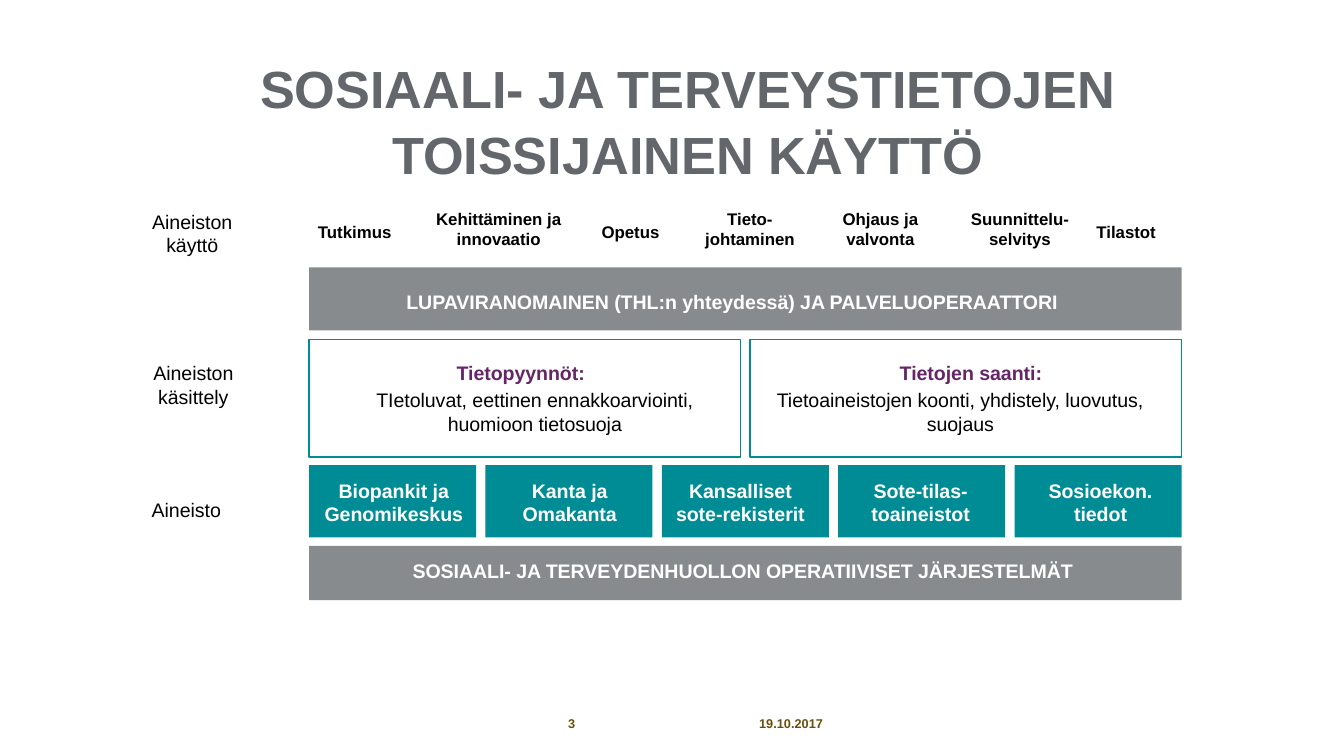
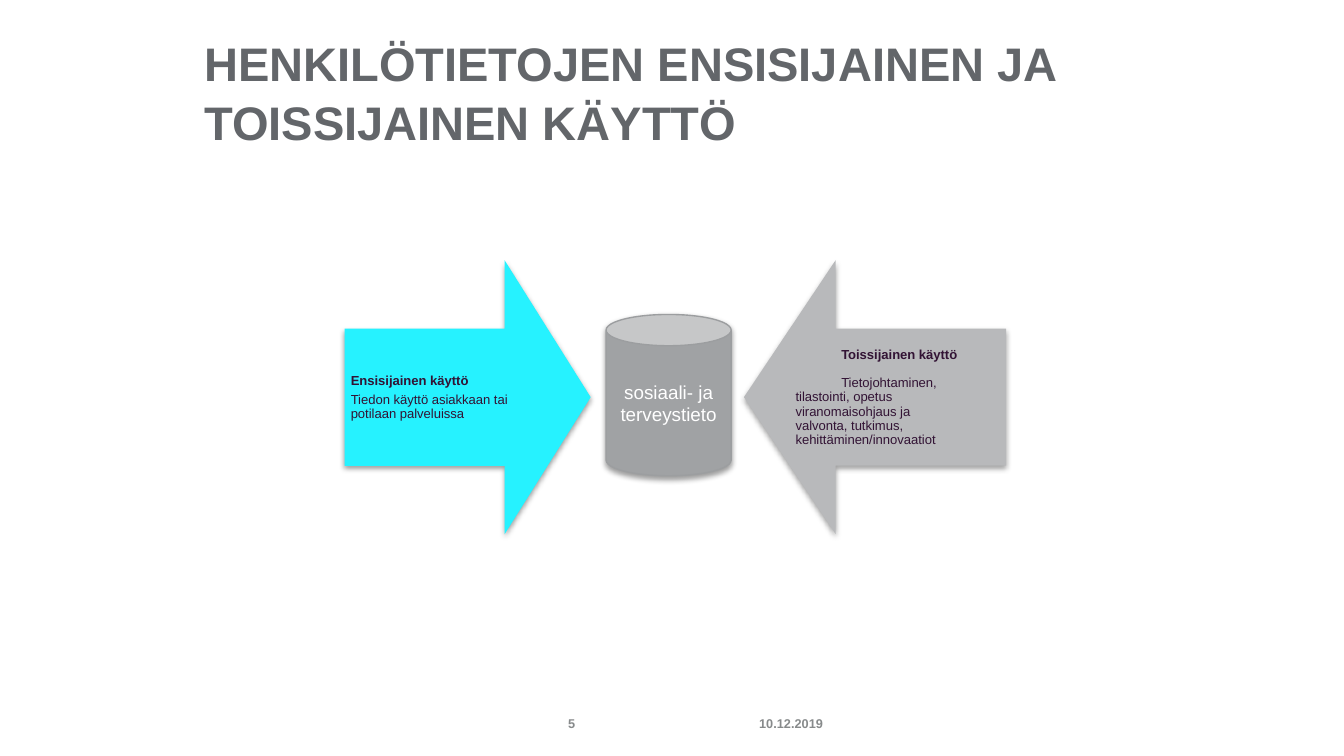
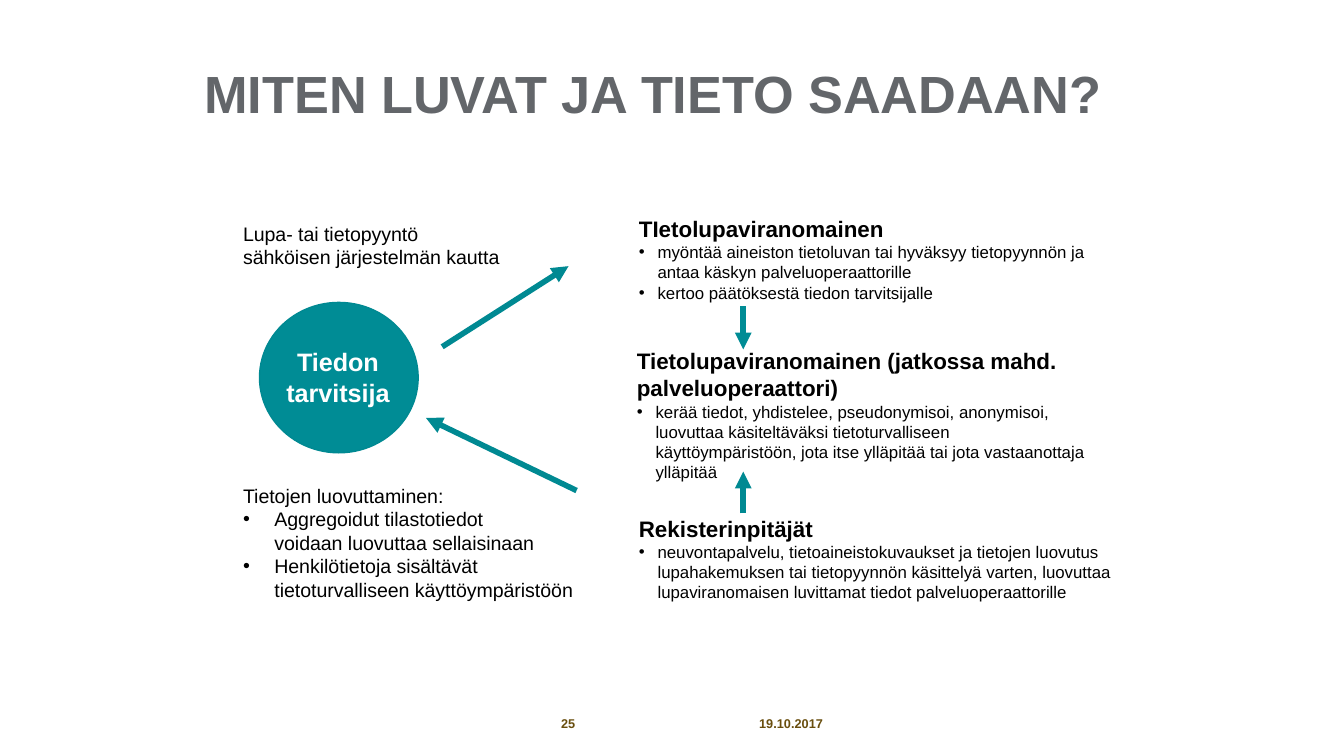
import copy

import pptx
import pptx.dml.color
import pptx.enum.shapes
import pptx.enum.text
import pptx.oxml
import pptx.oxml.ns
import pptx.util
from lxml import etree

Pt = pptx.util.Pt
qn = pptx.oxml.ns.qn
RGB = pptx.dml.color.RGBColor.from_string
ALIGN = pptx.enum.text.PP_ALIGN
ANCHOR = pptx.enum.text.MSO_ANCHOR
SHAPE = pptx.enum.shapes.MSO_SHAPE

COLORS = {
    "title": "63666A", "text": "000000", "white": "FFFFFF",
    "teal": "008C95", "teal_dark": "008992", "gray": "888B8D",
    "heading": "642667", "plum": "321334",
    "cyan": "26F2FF", "silver": "B8B9BB", "can": "A0A2A4", "can_edge": "9C9EA0",
    "brown": "694E0E", "footer_gray": "878A8B",
}
BOLD = {"size": Pt(10.5), "bold": True}
SMALL_BOLD = {"size": Pt(9), "bold": True}
PLAIN = {"size": Pt(10.5), "bold": False}
BULLET = {"size": Pt(9), "bold": False, "indent": 10}
FOOTER = {"size": Pt(6.8), "bold": True}


def write(box, paras, look, color="text", align=ALIGN.LEFT, anchor=ANCHOR.TOP,
          inset=(7.2, 3.6), layout=None):
    """Fill a box with paragraphs: plain strings, or (string, own look) pairs.

    The look key "indent" makes a bulleted paragraph with that hanging indent,
    "first" an indent of the first line only.
    """
    frame = box.text_frame
    side, edge = map(Pt, inset)
    settings = {"word_wrap": True, "vertical_anchor": anchor, "margin_left": side,
                "margin_right": side, "margin_top": edge, "margin_bottom": edge}
    for name, value in settings.items():
        setattr(frame, name, value)
    for index, item in enumerate(paras):
        text, own = item if isinstance(item, tuple) else (item, {})
        values = {**look, **own}
        indent, first = values.pop("indent", 0), values.pop("first", 0)
        shade = COLORS[values.pop("color", color)]
        after = values.pop("after", None)
        para = frame.add_paragraph() if index else frame.paragraphs[0]
        para.text = text
        for name, value in {"alignment": align, "space_after": after, **(layout or {})}.items():
            setattr(para, name, value)
        properties = para._p.get_or_add_pPr()
        if indent:
            properties.set("marL", str(Pt(indent)))
            properties.set("indent", str(Pt(-indent)))
            etree.SubElement(properties, qn("a:buFont")).set("typeface", "Arial")
            etree.SubElement(properties, qn("a:buChar")).set("char", "•")
        elif first:
            properties.set("indent", str(Pt(first)))
        for span in para.runs:
            for name, value in {"name": "Arial", **values}.items():
                setattr(span.font, name, value)
            span.font.color.rgb = RGB(shade)
        for line_break in para._p.findall(qn("a:br")):
            line_break.insert(0, copy.deepcopy(para.runs[0]._r.rPr))


def draw(page, kind, place, fill=None, line=None, shadow=False):
    shape = page.shapes.add_shape(kind, *map(Pt, place))
    shape.shadow.inherit = False
    if fill:
        shape.fill.solid()
        shape.fill.fore_color.rgb = RGB(COLORS[fill])
    else:
        shape.fill.background()
    if line:
        shape.line.color.rgb = RGB(COLORS[line])
        shape.line.width = Pt(0.75)
    else:
        shape.line.fill.background()
    if shadow:
        effects = shape._element.spPr.find(qn("a:effectLst"))
        outer = etree.SubElement(effects, qn("a:outerShdw"), blurRad=str(Pt(3.1)),
                                 dist=str(Pt(1.6)), dir="5400000", rotWithShape="0")
        tint = etree.SubElement(outer, qn("a:srgbClr"), val="000000")
        etree.SubElement(tint, qn("a:alpha"), val="38000")
    return shape


deck = pptx.Presentation()
deck.slide_width, deck.slide_height = Pt(720), Pt(405)

# Title and footer of every slide
WIDE_TITLE = (109.5, 15, 599, 67.7)
pages = []
for title, place, size, align, number, date, shade in [
    ("SOSIAALI- JA TERVEYSTIETOJEN TOISSIJAINEN KÄYTTÖ", (125.3, 27.4, 486, 72.7),
     28, ALIGN.CENTER, "3", "19.10.2017", "brown"),
    ("HENKILÖTIETOJEN ENSISIJAINEN JA TOISSIJAINEN KÄYTTÖ", WIDE_TITLE,
     25.2, ALIGN.LEFT, "5", "10.12.2019", "footer_gray"),
    ("MITEN LUVAT JA TIETO SAADAAN?", WIDE_TITLE,
     28, ALIGN.LEFT, "25", "19.10.2017", "brown"),
]:
    page = deck.slides.add_slide(deck.slide_layouts[6])
    pages.append(page)
    write(page.shapes.add_textbox(*map(Pt, place)), [title], {"size": Pt(size), "bold": True},
          "title", align, ANCHOR.MIDDLE, (0, 3.6), {"line_spacing": 1.05})
    for text, left, width, side in [(date, 399.6, 73.4, ALIGN.LEFT),
                                    (number, 267.8, 47.5, ALIGN.RIGHT)]:
        write(page.shapes.add_textbox(Pt(left), Pt(376.6), Pt(width), Pt(21.6)), [text],
              FOOTER, shade, side, ANCHOR.MIDDLE)

usage_page, arrows_page, permits_page = pages

# Slide 1: layers of secondary use
LEFT, WIDTH, GAP = 165.6, 467.4, 5
for top, height, count, fill, line in [
    (143.3, 33.8, 1, "gray", None),
    (182, 62.8, 2, None, "teal"),
    (249.2, 38.7, 5, "teal", None),
    (292.5, 29, 1, "gray", None),
]:
    width = (WIDTH - GAP * (count - 1)) / count
    for column in range(count):
        draw(usage_page, SHAPE.RECTANGLE,
             (LEFT + column * (width + GAP), top, width, height), fill, line)

TWO_LINES, ONE_LINE = 108, 115.2
SOURCES = 252.8
for paras, left, top, width, look, color, align in [
    (["Aineiston käyttö"], 74.2, 108.7, 57.6, PLAIN, "text", ALIGN.CENTER),
    (["Aineiston käsittely"], 69.8, 190, 67.7, PLAIN, "text", ALIGN.CENTER),
    (["Aineisto"], 74.2, 263, 67.7, PLAIN, "text", ALIGN.LEFT),
    (["Tutkimus"], 141.8, ONE_LINE, 96.5, SMALL_BOLD, "text", ALIGN.CENTER),
    (["Kehittäminen ja innovaatio"], 218.9, TWO_LINES, 96.5, SMALL_BOLD, "text", ALIGN.CENTER),
    (["Opetus"], 315.2, ONE_LINE, 62.6, SMALL_BOLD, "text", ALIGN.LEFT),
    (["Tieto-", "johtaminen"], 353.5, TWO_LINES, 96.5, SMALL_BOLD, "text", ALIGN.CENTER),
    (["Ohjaus ja valvonta"], 430.6, TWO_LINES, 82, SMALL_BOLD, "text", ALIGN.CENTER),
    (["Suunnittelu-", "selvitys"], 498.2, TWO_LINES, 96.5, SMALL_BOLD, "text", ALIGN.CENTER),
    (["Tilastot"], 580.3, ONE_LINE, 96.5, SMALL_BOLD, "text", ALIGN.LEFT),
    (["LUPAVIRANOMAINEN (THL:n yhteydessä) JA PALVELUOPERAATTORI"],
     175.7, 152, 433.4, BOLD, "white", ALIGN.CENTER),
    (["Tietopyynnöt:"], 212.4, 190, 133.2, BOLD, "heading", ALIGN.CENTER),
    (["TIetoluvat, eettinen ennakkoarviointi, huomioon tietosuoja"],
     175.7, 204.5, 221.8, PLAIN, "text", ALIGN.CENTER),
    (["Tietojen saanti:"], 465.1, 190, 110.2, BOLD, "heading", ALIGN.CENTER),
    (["Tietoaineistojen koonti, yhdistely, luovutus, suojaus"],
     401.8, 204.5, 225.4, PLAIN, "text", ALIGN.CENTER),
    (["Biopankit ja Genomikeskus"], 161.3, SOURCES, 99.4, BOLD, "white", ALIGN.CENTER),
    (["Kanta ja", "Omakanta"], 257, SOURCES, 96.5, BOLD, "white", ALIGN.CENTER),
    (["Kansalliset sote-rekisterit"], 348.5, SOURCES, 96.5, BOLD, "white", ALIGN.CENTER),
    (["Sote-tilas-", "toaineistot"], 445, SOURCES, 96.5, BOLD, "white", ALIGN.CENTER),
    (["Sosioekon. tiedot"], 541.4, SOURCES, 96.5, BOLD, "white", ALIGN.CENTER),
    (["SOSIAALI- JA TERVEYDENHUOLLON OPERATIIVISET JÄRJESTELMÄT"],
     183.6, 296, 429.1, BOLD, "white", ALIGN.CENTER),
]:
    height = 32.4 if top in (TWO_LINES, SOURCES, 204.5) else 22
    write(usage_page.shapes.add_textbox(*map(Pt, (left, top, width, height))),
          paras, look, color, align)

# Slide 2: two uses pointing at the shared data
PRIMARY = [
    ("Ensisijainen käyttö", {"bold": True, "after": Pt(2.5)}),
    ("Tiedon käyttö asiakkaan tai potilaan palveluissa", {"after": Pt(2.5)}),
]
SECONDARY = [
    ("Toissijainen käyttö", {"bold": True, "first": 24.5, "after": Pt(7.5)}),
    ("Tietojohtaminen,\vtilastointi, opetus\vviranomaisohjaus ja\vvalvonta, tutkimus,"
     "\vkehittäminen/innovaatiot", {"first": 24.5, "after": Pt(2.5)}),
]
for place, turn, fill, text_left, text_width, paras in [
    ((177.1, 146.9, 146.9, 131.8), 270, "cyan", 184.3, 108.7, PRIMARY),
    ((395.3, 142.6, 146.9, 140.4), 90, "silver", 422.6, 115.9, SECONDARY),
]:
    arrow = draw(arrows_page, SHAPE.DOWN_ARROW, place, fill, shadow=True)
    arrow.rotation = turn
    arrow.adjustments[0], arrow.adjustments[1] = 0.5, 0.35
    write(arrows_page.shapes.add_textbox(*map(Pt, (text_left, 176.4, text_width, 73.4))),
          paras, {"size": Pt(7), "bold": False}, "plum", ALIGN.LEFT, ANCHOR.MIDDLE,
          (3.6, 3.6), {"line_spacing": 0.9})
store = draw(arrows_page, SHAPE.CAN, (324.7, 168.5, 67, 86.4), "can", "can_edge", True)
write(store, ["sosiaali- ja terveystieto"], {"size": Pt(10.1)}, "white", ALIGN.CENTER,
      ANCHOR.MIDDLE, (3.6, 3.6))

# Slide 3: how permits and data move
for ends, color in [
    ((236.9, 185.8, 304.6, 142.6), "teal_dark"),
    ((398.2, 164.2, 398.2, 187.2), "teal"),
    ((398.2, 275, 398.2, 252.7), "teal_dark"),
    ((308.9, 262.8, 228.2, 223.9), "teal_dark"),
]:
    arrow = permits_page.shapes.add_connector(
        pptx.enum.shapes.MSO_CONNECTOR.STRAIGHT, *map(Pt, ends))
    arrow.line.color.rgb = RGB(COLORS[color])
    arrow.line.width = Pt(3)
    properties = arrow._element.spPr
    etree.SubElement(properties.find(qn("a:ln")), qn("a:tailEnd"), type="triangle")
    etree.SubElement(properties, qn("a:effectLst"))

draw(permits_page, SHAPE.OVAL, (139, 162, 85, 80.6), "teal", "teal_dark")
write(permits_page.shapes.add_textbox(*map(Pt, (113, 182.2, 136.1, 56.2))),
      ["Tiedon", "tarvitsija"], {"size": Pt(13.5), "bold": True}, "white", ALIGN.CENTER)

HEADING = {"size": Pt(12), "bold": True}
for place, look, paras in [
    ((123.1, 115.2, 157.7, 32.4), PLAIN,
     ["Lupa- tai tietopyyntö", "sähköisen järjestelmän kautta"]),
    ((123.1, 255.6, 200.2, 70.6), PLAIN,
     ["Tietojen luovuttaminen:",
      ("Aggregoidut tilastotiedot\vvoidaan luovuttaa sellaisinaan", {"indent": 16.8}),
      ("Henkilötietoja sisältävät tietoturvalliseen käyttöympäristöön", {"indent": 16.8})]),
    ((335.2, 111.6, 254.9, 54.7), HEADING,
     ["TIetolupaviranomainen",
      ("myöntää aineiston tietoluvan tai hyväksyy tietopyynnön ja antaa käskyn "
       "palveluoperaattorille", BULLET),
      ("kertoo päätöksestä tiedon tarvitsijalle", BULLET)]),
    ((334.1, 182.6, 258.5, 79.9), HEADING,
     ["Tietolupaviranomainen (jatkossa mahd. palveluoperaattori)",
      ("kerää tiedot, yhdistelee, pseudonymisoi, anonymisoi, luovuttaa käsiteltäväksi "
       "tietoturvalliseen käyttöympäristöön, jota itse ylläpitää tai jota vastaanottaja "
       "ylläpitää", BULLET)]),
    ((335.2, 272.2, 276.5, 54.7), HEADING,
     ["Rekisterinpitäjät",
      ("neuvontapalvelu, tietoaineistokuvaukset ja tietojen luovutus lupahakemuksen tai "
       "tietopyynnön käsittelyä varten, luovuttaa lupaviranomaisen luvittamat tiedot "
       "palveluoperaattorille", BULLET)]),
]:
    write(permits_page.shapes.add_textbox(*map(Pt, place)), paras, look)

deck.save("out.pptx")
